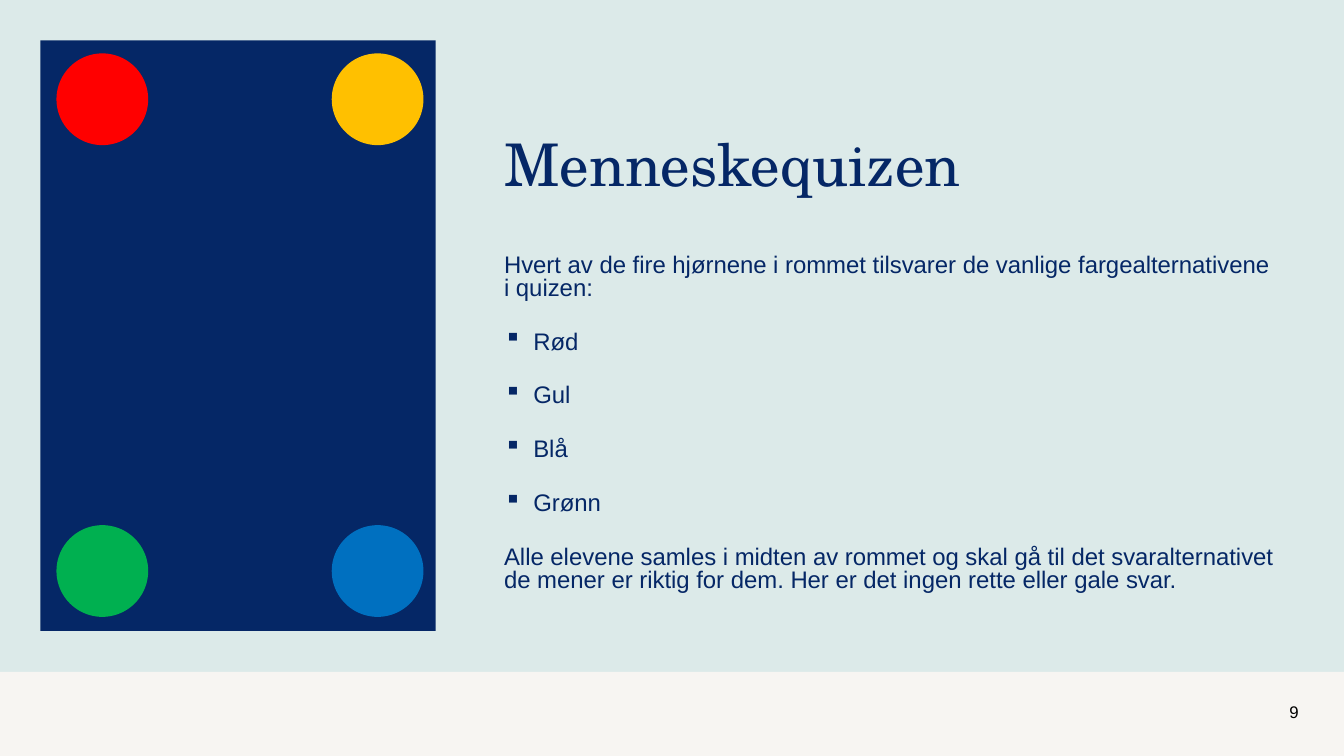
from itertools import product

from lxml import etree
from pptx import Presentation
from pptx.dml.color import RGBColor
from pptx.enum.shapes import MSO_SHAPE as Shape
from pptx.enum.text import MSO_ANCHOR as Anchor, MSO_AUTO_SIZE as AutoSize, PP_ALIGN as Align
from pptx.oxml.ns import qn
from pptx.util import Inches, Pt

WIDTH, HEIGHT = 13.33, 7.5
NAVY = "052766"
TEXT_LEFT = 5
INDENT = 0.29
CIRCLE = 0.91
CIRCLE_LEFTS, CIRCLE_TOPS = (0.56, 3.29), (0.53, 5.21)
CORNER_COLOURS = ("FF0000", "FFC000", "00B050", "0070C0")

INTRO = "Hvert av de fire hjørnene i rommet tilsvarer de vanlige fargealternativene i quizen:"
COLOUR_NAMES = ("Rød", "Gul", "Blå", "Grønn")
CLOSING = ("Alle elevene samles i midten av rommet og skal gå til det svaralternativet "
           "de mener er riktig for dem. Her er det ingen rette eller gale svar.")


def colour(hex_string):
    return RGBColor.from_string(hex_string)


def box(left, top, width, height):
    return [Inches(length) for length in (left, top, width, height)]


def add_filled(slide, preset, position, fill):
    shape = slide.shapes.add_shape(preset, *box(*position))
    shape.shadow.inherit = False
    shape.fill.solid()
    shape.fill.fore_color.rgb = colour(fill)
    shape.line.fill.background()


def prepare_frame(shape, anchor):
    """Remove insets, wrap the text and anchor it."""
    frame = shape.text_frame
    frame.margin_left = frame.margin_top = frame.margin_right = frame.margin_bottom = 0
    frame.word_wrap = True
    frame.auto_size = AutoSize.NONE
    frame.vertical_anchor = anchor
    return frame


def style(paragraph, size, font_name="Arial", hex_string=NAVY, align=Align.LEFT):
    paragraph.alignment = align
    for run in paragraph.runs:
        run.font.size = Pt(size)
        run.font.name = font_name
        run.font.color.rgb = colour(hex_string)


def add_bullet(paragraph):
    properties = paragraph._p.get_or_add_pPr()
    properties.set("marL", str(Inches(INDENT)))
    properties.set("indent", str(Inches(-INDENT)))
    etree.SubElement(properties, qn("a:buChar")).set("char", "▪")


def set_title(slide, text):
    title = slide.shapes.title
    title.left, title.top, title.width, title.height = box(TEXT_LEFT, 1.26, 7.22, 0.71)
    frame = prepare_frame(title, Anchor.BOTTOM)
    frame.text = text
    style(frame.paragraphs[0], 42, "TeX Gyre Schola")


def add_instructions(slide):
    frame = prepare_frame(slide.shapes.add_textbox(*box(TEXT_LEFT, 2.53, 7.66, 3.74)), Anchor.TOP)
    frame.text = "\n".join((INTRO, *COLOUR_NAMES, CLOSING))
    for index, paragraph in enumerate(frame.paragraphs):
        paragraph.line_spacing = 0.8
        paragraph.space_before = Pt(22 if index else 0)
        if paragraph.text in COLOUR_NAMES:
            add_bullet(paragraph)
        style(paragraph, 17.1)


def add_page_number(slide, number):
    frame = prepare_frame(slide.shapes.add_textbox(*box(9.88, 6.86, 3, 0.4)), Anchor.MIDDLE)
    frame.text = number
    style(frame.paragraphs[0], 12, hex_string="000000", align=Align.RIGHT)


def add_room(slide):
    """Draw the room with a coloured circle in each corner."""
    add_filled(slide, Shape.RECTANGLE, (0.4, 0.4, 3.92, 5.86), NAVY)
    for (top, left), fill in zip(product(CIRCLE_TOPS, CIRCLE_LEFTS), CORNER_COLOURS):
        add_filled(slide, Shape.OVAL, (left, top, CIRCLE, CIRCLE), fill)


def main():
    presentation = Presentation()
    presentation.slide_width, presentation.slide_height = Inches(WIDTH), Inches(HEIGHT)
    slide = presentation.slides.add_slide(presentation.slide_layouts[5])
    slide.background.fill.solid()
    slide.background.fill.fore_color.rgb = colour("DCEAE9")

    footer_top = HEIGHT * 8 / 9
    add_filled(slide, Shape.RECTANGLE, (0, footer_top, WIDTH, HEIGHT - footer_top), "F7F5F2")
    set_title(slide, "Menneskequizen")
    add_instructions(slide)
    add_page_number(slide, "9")
    add_room(slide)
    presentation.save("out.pptx")


if __name__ == "__main__":
    main()
